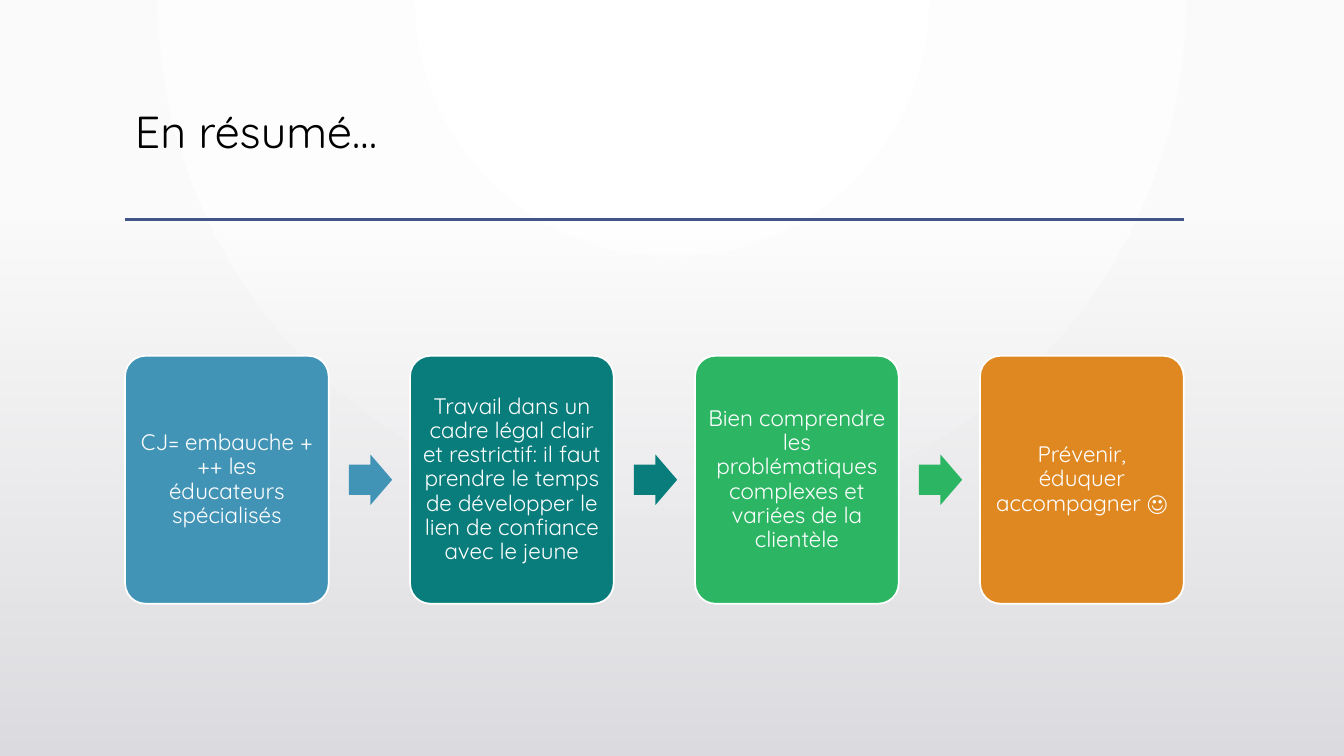
from lxml import etree
from pptx import Presentation
from pptx.dml.color import RGBColor
from pptx.enum.shapes import MSO_CONNECTOR, MSO_SHAPE
from pptx.enum.text import MSO_ANCHOR, PP_ALIGN
from pptx.oxml import parse_xml
from pptx.oxml.ns import nsdecls, qn
from pptx.util import Inches, Pt

ROUNDED, ARROW, RECTANGLE = (
    MSO_SHAPE.ROUNDED_RECTANGLE, MSO_SHAPE.RIGHT_ARROW, MSO_SHAPE.RECTANGLE)
STRAIGHT = MSO_CONNECTOR.STRAIGHT
TOP, MIDDLE = MSO_ANCHOR.TOP, MSO_ANCHOR.MIDDLE
LEFT, CENTER = PP_ALIGN.LEFT, PP_ALIGN.CENTER

FONT = "Quicksand"
SLIDE_W, SLIDE_H = 13.33, 7.5
MARGIN, CONTENT_W = 1.24, 10.5
RULE_Y = 2.18
STEPS = [
    ("CJ= embauche +++ les éducateurs spécialisés", "4294B6"),
    ("Travail dans un cadre légal clair et restrictif: il faut prendre le temps "
     "de développer le lien de confiance avec le jeune", "087D7C"),
    ("Bien comprendre les problématiques complexes et variées de la clientèle",
     "2CB663"),
    ("Prévenir, éduquer accompagner ☺", "DF8822"),
]
SPOTLIGHT = ('<a:path {} path="circle">'
             '<a:fillToRect l="43000" r="43000" b="100000"/></a:path>')
DOWNWARD = '<a:lin {} ang="5400000" scaled="0"/>'


def rgb(value):
    return RGBColor.from_string(value)


def set_gradient(fill, owner, colors, direction, first_alpha=None):
    """Give the owner element's fill two stops and a direction in XML."""
    fill.gradient()
    for stop, color in zip(fill.gradient_stops, colors):
        stop.color.rgb = rgb(color)
    gradient = next(owner.iter(qn("a:gradFill")))
    stops = gradient.find(qn("a:gsLst"))
    for stop, position in zip(stops, ("0", "100000")):
        stop.set("pos", position)
    if first_alpha is not None:
        etree.SubElement(stops[0][0], qn("a:alpha"), val=str(first_alpha))
    for old_direction in gradient.findall(qn("a:lin")):
        gradient.remove(old_direction)
    stops.addnext(parse_xml(direction.format(nsdecls("a"))))


def add_block(slide, preset, left, top, width, height):
    block = slide.shapes.add_shape(
        preset, Inches(left), Inches(top), Inches(width), Inches(height))
    block.shadow.inherit = False
    block.line.fill.background()
    return block


def write(frame, text, size, color, align, anchor):
    frame.word_wrap = True
    frame.vertical_anchor = anchor
    frame.text = text
    paragraph = frame.paragraphs[0]
    paragraph.alignment = align
    paragraph.line_spacing = 0.9
    font = paragraph.runs[0].font
    font.name, font.size, font.color.rgb = FONT, Pt(size), rgb(color)


def draw_background(slide):
    set_gradient(slide.background.fill, slide._element,
                 ("FFFFFF", "FAFAFA"), SPOTLIGHT)
    fade_top = 2.21
    fade = add_block(slide, RECTANGLE, 0, fade_top, SLIDE_W, SLIDE_H - fade_top)
    set_gradient(fade.fill, fade._element,
                 ("DCDCE0", "DCDCE0"), DOWNWARD, first_alpha=0)


def draw_heading(slide, left, top, width, height):
    title = slide.shapes.add_textbox(
        Inches(left), Inches(top), Inches(width), Inches(height))
    write(title.text_frame, "En résumé…", 32, "000000", LEFT, TOP)
    rule = slide.shapes.add_connector(
        STRAIGHT, Inches(left), Inches(RULE_Y), Inches(left + width), Inches(RULE_Y))
    rule.line.color.rgb = rgb("415588")
    rule.line.width = Pt(2.5)
    etree.SubElement(rule._element.spPr, qn("a:effectLst"))


def draw_step(slide, text, color, left, top, width, height):
    card = add_block(slide, ROUNDED, left, top, width, height)
    card.adjustments[0] = 0.1
    card.fill.solid()
    card.fill.fore_color.rgb = rgb(color)
    card.line.color.rgb = rgb("FFFFFF")
    card.line.width = Pt(1.25)
    frame = card.text_frame
    frame.margin_left = frame.margin_right = Inches(0.07)
    frame.margin_top = frame.margin_bottom = Inches(0.07)
    write(frame, text, 16, "FFFFFF", CENTER, MIDDLE)


def draw_process(slide, left, top, width, height):
    """Spread the step cards over the width, with an arrow in each gap."""
    card_w, arrow_w, arrow_h = 2.02, 0.43, 0.5
    pitch = (width - card_w) / (len(STEPS) - 1)
    for index, (text, color) in enumerate(STEPS):
        card_left = left + index * pitch
        draw_step(slide, text, color, card_left, top, card_w, height)
        if index < len(STEPS) - 1:
            arrow = add_block(slide, ARROW, card_left + card_w + 0.2,
                              top + (height - arrow_h) / 2, arrow_w, arrow_h)
            arrow.adjustments[0] = 0.6
            arrow.adjustments[1] = 0.5
            arrow.fill.solid()
            arrow.fill.fore_color.rgb = rgb(color)


def main():
    deck = Presentation()
    deck.slide_width, deck.slide_height = Inches(SLIDE_W), Inches(SLIDE_H)
    slide = deck.slides.add_slide(deck.slide_layouts[6])
    draw_background(slide)
    draw_heading(slide, MARGIN, 1.04, CONTENT_W, 1.15)
    draw_process(slide, MARGIN, 3.53, CONTENT_W, 2.46)
    deck.save("out.pptx")


if __name__ == "__main__":
    main()
